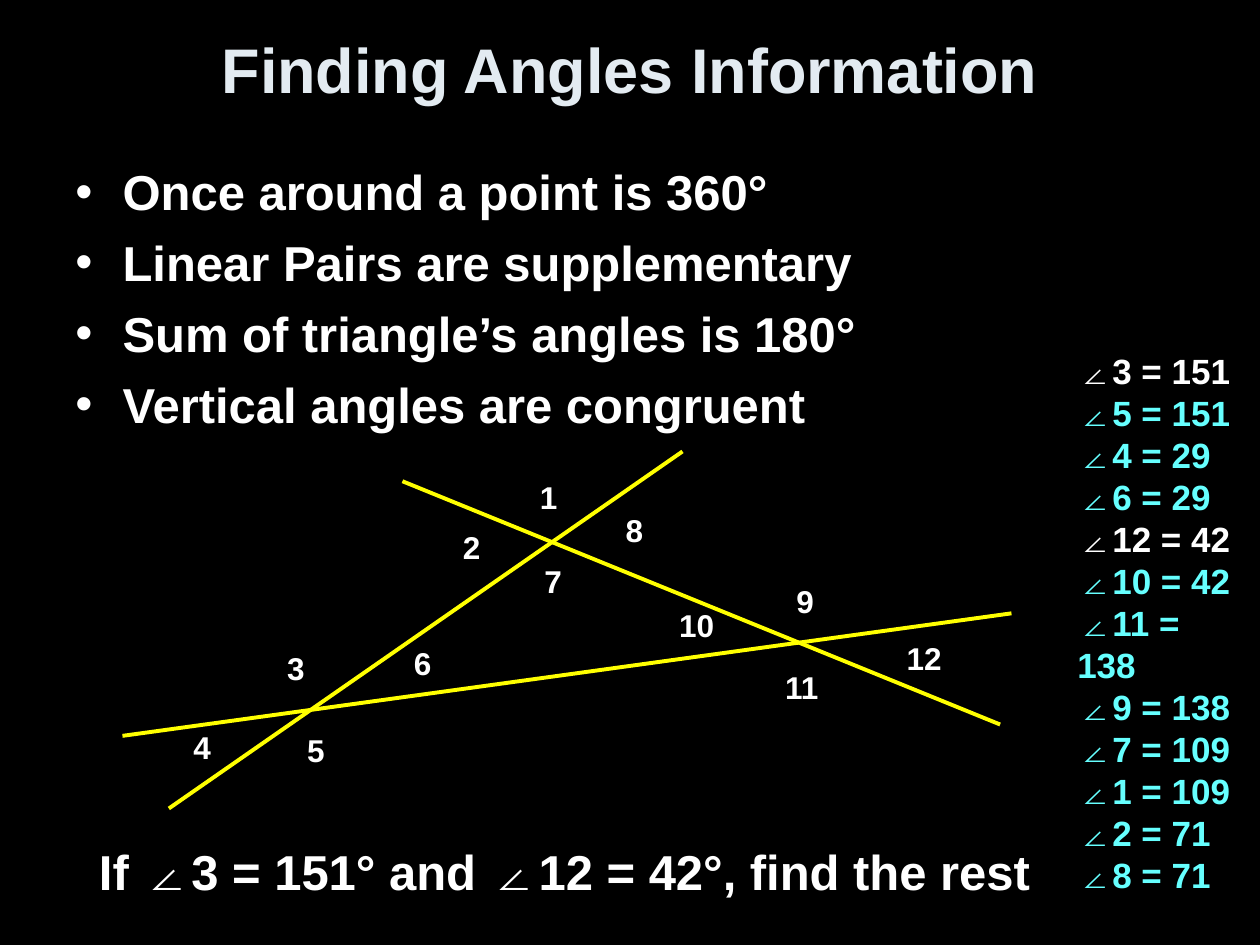
from lxml import etree
from pptx import Presentation
from pptx.dml.color import RGBColor
from pptx.enum.shapes import MSO_CONNECTOR
from pptx.enum.text import MSO_ANCHOR, PP_ALIGN
from pptx.oxml.ns import qn
from pptx.util import Pt

STRAIGHT = MSO_CONNECTOR.STRAIGHT
MIDDLE = MSO_ANCHOR.MIDDLE
CENTER = PP_ALIGN.CENTER

BLACK = RGBColor(0x00, 0x00, 0x00)
WHITE = RGBColor(0xFF, 0xFF, 0xFF)
PALE = RGBColor(0xE3, 0xEB, 0xF1)
YELLOW = RGBColor(0xFF, 0xFF, 0x00)
CYAN = RGBColor(0x66, 0xFF, 0xFF)


def add_text(shapes, left, top, width, height, lines, size, wrap=True):
    sp = shapes.add_textbox(Pt(left), Pt(top), Pt(width), Pt(height))
    tf = sp.text_frame
    tf.word_wrap = wrap
    for i, (text, color) in enumerate(lines):
        p = tf.paragraphs[0] if i == 0 else tf.add_paragraph()
        r = p.add_run()
        r.text = text
        r.font.name = "Arial"
        r.font.size = Pt(size)
        r.font.bold = True
        r.font.color.rgb = color
    return tf


prs = Presentation()
prs.slide_width = Pt(720)
prs.slide_height = Pt(540)
s = prs.slides.add_slide(prs.slide_layouts[6])
s.background.fill.solid()
s.background.fill.fore_color.rgb = BLACK

tf = add_text(s.shapes, 36, 13, 648, 52.5, [("Finding Angles Information", PALE)], 36)
tf.vertical_anchor = MIDDLE
tf.paragraphs[0].alignment = CENTER

facts = [
    "Once around a point is 360°",
    "Linear Pairs are supplementary",
    "Sum of triangle’s angles is 180°",
    "Vertical angles are congruent",
]
tf = add_text(s.shapes, 36, 89, 648, 177, [(fact, WHITE) for fact in facts], 28)
for i, p in enumerate(tf.paragraphs):
    if i > 0:
        p.space_before = Pt(6.8)
    pPr = p._p.get_or_add_pPr()
    pPr.set("marL", str(Pt(27)))
    pPr.set("indent", str(Pt(-27)))
    color = etree.SubElement(pPr, qn("a:buClr"))
    etree.SubElement(color, qn("a:srgbClr"), val=str(WHITE))
    etree.SubElement(pPr, qn("a:buFont"), typeface="Arial")
    etree.SubElement(pPr, qn("a:buChar"), char="•")

figure = s.shapes.add_group_shape()
for x1, y1, x2, y2 in [
    (96.5, 462, 390, 258),
    (230, 275, 571.5, 414),
    (70, 420.5, 578, 350.5),
]:
    line = figure.shapes.add_connector(STRAIGHT, Pt(x1), Pt(y1), Pt(x2), Pt(y2))
    line.line.color.rgb = YELLOW
    line.line.width = Pt(2.25)
    etree.SubElement(line._element.spPr, qn("a:effectLst"))

angle_labels = [
    (1, 301.5, 269.5), (2, 257.5, 298), (3, 157, 367.5), (4, 103.5, 412.5),
    (5, 168.5, 414), (6, 229.5, 364.5), (7, 304, 317.5), (8, 350.5, 288.5),
    (9, 448, 329), (10, 381, 342.5), (11, 441.5, 378), (12, 511, 361.5),
]
for number, left, top in angle_labels:
    width = 24.5 if number < 10 else 34.5
    add_text(figure.shapes, left, top, width, 29, [(str(number), WHITE)], 18, wrap=False)

question = "If ∠3 = 151° and ∠12 = 42°, find the rest"
add_text(s.shapes, 49.5, 477.5, 548, 41, [(question, WHITE)], 28, wrap=False)

given = (3, 12)
answers = [
    (3, 151), (5, 151), (4, 29), (6, 29), (12, 42), (10, 42),
    (11, 138), (9, 138), (7, 109), (1, 109), (2, 71), (8, 71),
]
lines = [(f"∠{n} = {value}", WHITE if n in given else CYAN) for n, value in answers]
add_text(s.shapes, 608.5, 196, 108, 296, lines, 20)

prs.save("out.pptx")
